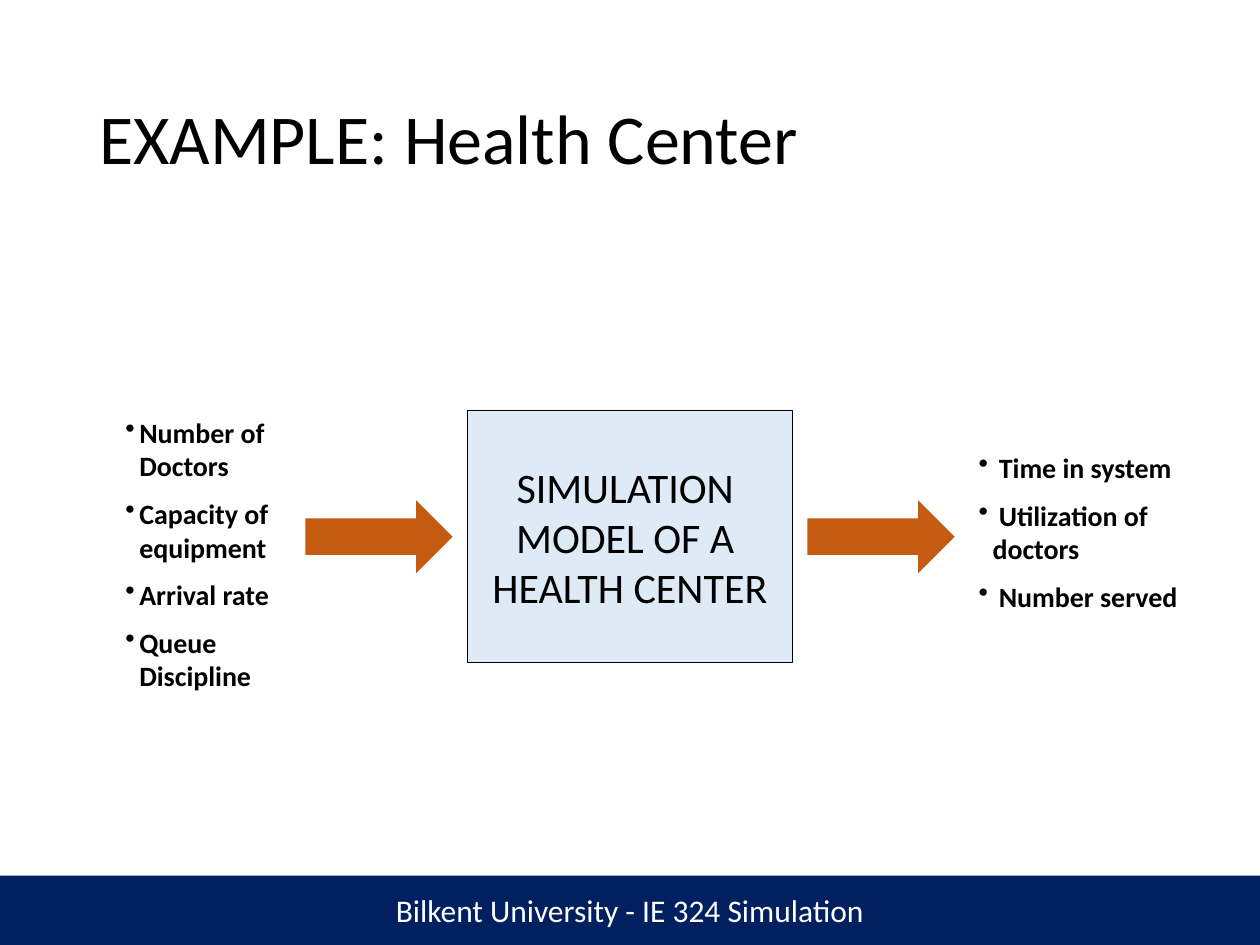
from lxml import etree
from pptx import Presentation
from pptx.dml.color import RGBColor
from pptx.enum.shapes import MSO_SHAPE
from pptx.enum.text import MSO_ANCHOR, PP_ALIGN
from pptx.oxml.ns import qn
from pptx.util import Cm, Pt

RECT, ARROW = MSO_SHAPE.RECTANGLE, MSO_SHAPE.RIGHT_ARROW
MIDDLE = MSO_ANCHOR.MIDDLE
LEFT, CENTER = PP_ALIGN.LEFT, PP_ALIGN.CENTER

BLACK = RGBColor(0x00, 0x00, 0x00)
WHITE = RGBColor(0xFF, 0xFF, 0xFF)
NAVY = RGBColor(0x00, 0x20, 0x60)
PALE_BLUE = RGBColor(0xDE, 0xEB, 0xF7)
ORANGE = RGBColor(0xC5, 0x5A, 0x11)
FONT = "Calibri"

# Content
TITLE = "EXAMPLE: Health Center"
FOOTER = "Bilkent University - IE 324 Simulation"
MODEL = ["SIMULATION ", "MODEL OF A ", "HEALTH CENTER"]
INPUTS = ["Number of Doctors", "Capacity of equipment", "Arrival rate", "Queue Discipline"]
OUTPUTS = [" Time in system", " Utilization of doctors", " Number served"]

# Layout in cm
SLIDE_W, SLIDE_H = 25.4, 19.05
FOOTER_H = 1.4
MODEL_W, MODEL_H, MODEL_TOP = 6.55, 5.08, 8.28
ARROW_W, ARROW_H, GAP = 2.97, 1.47, 0.3
INDENT = 0.28


def add_text(sp, lines, size=16, color=BLACK, bold=False, align=LEFT,
             bullet=False, wrap=True, spacing=None):
    tf = sp.text_frame
    tf.word_wrap = wrap
    tf.vertical_anchor = MIDDLE
    for i, line in enumerate(lines):
        p = tf.paragraphs[0] if i == 0 else tf.add_paragraph()
        p.alignment = align
        if spacing:
            p.line_spacing = spacing
        if bullet:
            p.space_before = Pt(size / 2)
            pPr = p._p.get_or_add_pPr()
            pPr.set("marL", str(Cm(INDENT)))
            pPr.set("indent", str(-Cm(INDENT)))
            etree.SubElement(pPr, qn("a:buChar"), char="•")
        r = p.add_run()
        r.text = line
        r.font.name, r.font.size, r.font.bold = FONT, Pt(size), bold
        r.font.color.rgb = color


def add_shape(s, kind, x, y, w, h, fill, line=None):
    sp = s.shapes.add_shape(kind, Cm(x), Cm(y), Cm(w), Cm(h))
    sp.shadow.inherit = False
    sp.fill.solid()
    sp.fill.fore_color.rgb = fill
    if line is None:
        sp.line.fill.background()
    else:
        sp.line.color.rgb = line
        sp.line.width = Pt(0.75)
    return sp


def add_box(s, x, y, w, h):
    return s.shapes.add_textbox(Cm(x), Cm(y), Cm(w), Cm(h))


def main():
    prs = Presentation()
    prs.slide_width, prs.slide_height = Cm(SLIDE_W), Cm(SLIDE_H)
    s = prs.slides.add_slide(prs.slide_layouts[6])

    # Footer band and title
    footer = add_shape(s, RECT, 0, SLIDE_H - FOOTER_H, SLIDE_W, FOOTER_H, NAVY)
    add_text(footer, [FOOTER], size=18, color=WHITE, align=CENTER)
    add_text(add_box(s, 1.75, 1.02, 21.9, 3.68), [TITLE], size=40, spacing=0.9)

    # Model box, centred on the slide
    model_x = (SLIDE_W - MODEL_W) / 2
    model = add_shape(s, RECT, model_x, MODEL_TOP, MODEL_W, MODEL_H, PALE_BLUE, BLACK)
    add_text(model, MODEL, size=24, align=CENTER, wrap=False)

    # Arrows into and out of the model
    arrow_y = MODEL_TOP + (MODEL_H - ARROW_H) / 2
    for x in (model_x - GAP - ARROW_W, model_x + MODEL_W + GAP):
        add_shape(s, ARROW, x, arrow_y, ARROW_W, ARROW_H, ORANGE)

    # Input and output lists
    for items, x, y, w, h in ((INPUTS, 2.28, 8.13, 3.61, 6.07),
                              (OUTPUTS, 19.48, 8.89, 4.65, 3.66)):
        add_text(add_box(s, x, y, w, h), items, bold=True, bullet=True)

    prs.save("out.pptx")


if __name__ == "__main__":
    main()
